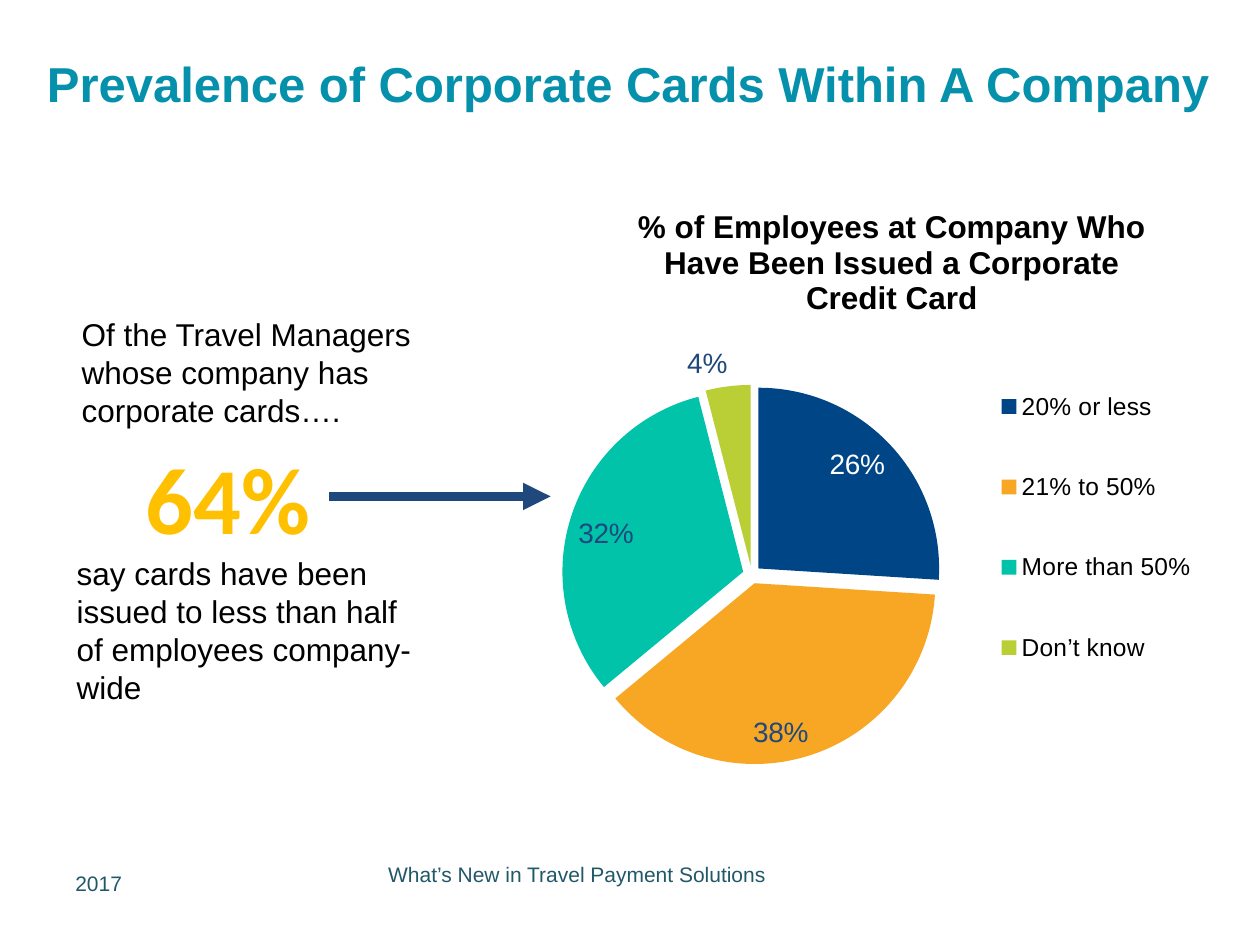
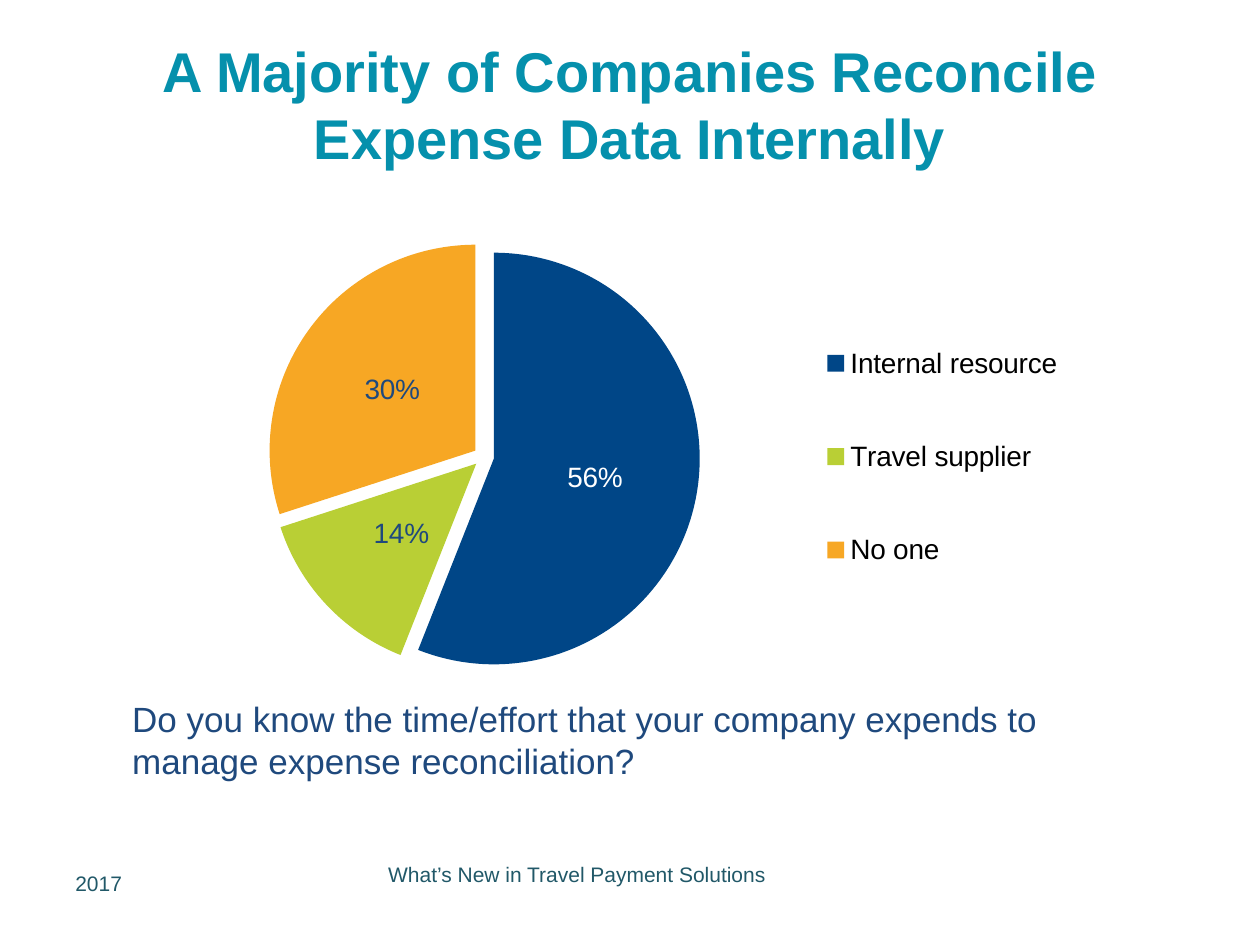
import pptx
import pptx.chart.data
import pptx.dml.color
import pptx.enum.chart
import pptx.enum.shapes
import pptx.enum.text
import pptx.oxml
import pptx.oxml.ns
import pptx.util
from pptx.dml.color import RGBColor
from pptx.util import Inches

TITLE_TEAL = RGBColor(0x05, 0x90, 0xAC)
FOOTER_TEAL = RGBColor(0x21, 0x58, 0x68)
NAVY = RGBColor(0x1F, 0x49, 0x7D)
GOLD = RGBColor(0xFF, 0xC0, 0x00)
BLACK = RGBColor(0, 0, 0)
WHITE = RGBColor(0xFF, 0xFF, 0xFF)
BLUE = RGBColor(0x00, 0x46, 0x87)
ORANGE = RGBColor(0xF7, 0xA7, 0x24)
AQUA = RGBColor(0x00, 0xC3, 0xAA)
LIME = RGBColor(0xB9, 0xCF, 0x35)

ALIGN = pptx.enum.text.PP_ALIGN
ANCHOR = pptx.enum.text.MSO_ANCHOR
LABEL = pptx.enum.chart.XL_LABEL_POSITION
qn = pptx.oxml.ns.qn
CHART_NS = pptx.oxml.ns.nsdecls("c")


def write(box, text, size, color, font="Arial", bold=False, align=ALIGN.LEFT):
    """Fill a text box or placeholder and format its only run."""
    frame = box.text_frame
    frame.word_wrap = True
    frame.text = text
    paragraph = frame.paragraphs[0]
    paragraph.alignment = align
    run_font = paragraph.runs[0].font
    run_font.name, run_font.size, run_font.bold = font, pptx.util.Pt(size), bold
    run_font.color.rgb = color
    return frame


def place(part, index, **fractions):
    """Give a chart part a manual layout, in fractions of the chart."""
    old = part.find(qn("c:layout"))
    if old is not None:
        part.remove(old)
    inner = '<c:layoutTarget val="inner"/>' if index == 0 else ""
    modes = "".join(f'<c:{k}Mode val="edge"/>' for k in fractions if k in "xy")
    values = "".join(f'<c:{k} val="{v}"/>' for k, v in fractions.items())
    part.insert(index, pptx.oxml.parse_xml(
        f"<c:layout {CHART_NS}><c:manualLayout>{inner}{modes}{values}"
        "</c:manualLayout></c:layout>"))


prs = pptx.Presentation()
prs.slide_width, prs.slide_height = Inches(10), Inches(7.5)

pages = [
    dict(title="Prevalence of Corporate Cards Within A Company",
         title_size=28, title_box=(0.17, 0.15, 9.63, 1.02),
         chart_box=(4.07, 1.43, 5.58, 5.4),
         chart_title="% of Employees at Company Who Have Been Issued "
                     "a Corporate Credit Card",
         plot=dict(x=0.07, y=0.28, w=0.54, h=0.6),
         legend=dict(x=0.67, y=0.235, w=0.32, h=0.55), legend_size=14,
         slices=[("20% or less", 0.26, BLUE, WHITE, LABEL.INSIDE_END),
                 ("21% to 50%", 0.38, ORANGE, NAVY, LABEL.INSIDE_END),
                 ("More than 50%", 0.32, AQUA, NAVY, LABEL.INSIDE_END),
                 ("Don’t know", 0.04, LIME, NAVY, LABEL.OUTSIDE_END)],
         notes=[("say cards have been issued to less than half of employees "
                 "company-wide", 18, BLACK, (0.51, 4.35, 2.88, 1.31)),
                ("Of the Travel Managers whose company has corporate cards….",
                 18, BLACK, (0.55, 2.45, 2.84, 1.01))]),
    dict(title="A Majority of Companies Reconcile Expense Data Internally",
         title_size=32, title_box=(0.5, 0.31, 9, 1.02),
         chart_box=(1, 1.58, 8, 4.7), chart_title=None,
         plot=dict(x=0.14, y=0.07, w=0.43, h=0.73),
         legend=dict(x=0.68, y=0.145, w=0.26, h=0.58), legend_size=16,
         slices=[("Internal resource", 0.56, BLUE, WHITE, LABEL.CENTER),
                 ("Travel supplier", 0.14, LIME, NAVY, LABEL.CENTER),
                 ("No one", 0.3, ORANGE, NAVY, LABEL.CENTER)],
         notes=[("Do you know the time/effort that your company expends to "
                 "manage expense reconciliation?", 20, NAVY,
                 (0.95, 5.49, 8.08, 0.77))]),
]

for page in pages:
    slide = prs.slides.add_slide(prs.slide_layouts[5])

    # Footer
    footer = slide.shapes.add_textbox(*map(Inches, (1.63, 6.61, 5.9, 0.65)))
    write(footer, "What’s New in Travel Payment Solutions", 12, FOOTER_TEAL,
          align=ALIGN.CENTER).vertical_anchor = ANCHOR.MIDDLE
    year = slide.shapes.add_textbox(*map(Inches, (0.5, 6.86, 2.56, 0.57)))
    write(year, "2017", 12, FOOTER_TEAL)

    # Title
    title = slide.shapes.title
    title.left, title.top, title.width, title.height = map(
        Inches, page["title_box"])
    heading = write(title, page["title"], page["title_size"], TITLE_TEAL,
                    bold=True, align=ALIGN.CENTER)
    heading.vertical_anchor = ANCHOR.MIDDLE
    heading.auto_size = pptx.enum.text.MSO_AUTO_SIZE.NONE

    # Pie chart
    names, shares, *_ = zip(*page["slices"])
    answers = pptx.chart.data.CategoryChartData(number_format="0%")
    answers.categories = names
    answers.add_series("Series 1", shares)
    chart = slide.shapes.add_chart(
        pptx.enum.chart.XL_CHART_TYPE.PIE,
        *map(Inches, page["chart_box"]), answers).chart
    chart.font.name, chart.font.size = "Arial", pptx.util.Pt(10)
    chart.font.color.rgb = BLACK
    pie = chart.plots[0]
    pie.vary_by_categories = True
    place(chart._chartSpace.chart.plotArea, 0, **page["plot"])

    chart.has_title = page["chart_title"] is not None
    if chart.has_title:
        caption = chart.chart_title.text_frame
        caption.text = page["chart_title"]
        caption_font = caption.paragraphs[0].runs[0].font
        caption_font.name, caption_font.size = "Arial", pptx.util.Pt(18)
        caption_font.bold = True
        caption_font.color.rgb = BLACK
        place(chart.chart_title._element, 1, x=0.17, y=0.03)

    chart.has_legend = True
    legend = chart.legend
    legend.position = pptx.enum.chart.XL_LEGEND_POSITION.BOTTOM
    legend.include_in_layout = False
    legend.font.name = "Arial"
    legend.font.size = pptx.util.Pt(page["legend_size"])
    legend.font.color.rgb = BLACK
    place(legend._element, 1, **page["legend"])

    # Slices, pulled apart, with their labels
    series = pie.series[0]
    series._element.find(qn("c:tx")).addnext(
        pptx.oxml.parse_xml(f'<c:explosion {CHART_NS} val="5"/>'))
    labels = series.data_labels
    labels.show_value = True
    labels.number_format, labels.number_format_is_linked = "0%", False
    for i, (_, _, fill, label_color, position) in enumerate(page["slices"]):
        point = series.points[i]
        point.format.fill.solid()
        point.format.fill.fore_color.rgb = fill
        label = point.data_label
        label.font.name, label.font.size = "Arial", pptx.util.Pt(16)
        label.font.color.rgb = label_color
        label.position = position

    # Text beside or below the chart
    for text, size, color, box in page["notes"]:
        note = slide.shapes.add_textbox(*map(Inches, box))
        write(note, text, size, color)

# Key figure and its arrow to the pie, on the first slide
first = prs.slides[0].shapes
figure = first.add_textbox(*map(Inches, (1.06, 3.44, 1.52, 1.01)))
write(figure, "64%", 54, GOLD, font="Calibri", bold=True).word_wrap = False
arrow = first.add_connector(
    pptx.enum.shapes.MSO_CONNECTOR.STRAIGHT,
    *map(Inches, (2.61, 3.94, 4.37, 3.94)))
arrow.line.color.rgb = NAVY
arrow.line.width = pptx.util.Pt(5.25)
drawing_ns = pptx.oxml.ns.nsdecls("a")
arrow.line._get_or_add_ln().append(
    pptx.oxml.parse_xml(f'<a:tailEnd {drawing_ns} type="triangle"/>'))
arrow._element.spPr.append(
    pptx.oxml.parse_xml(f"<a:effectLst {drawing_ns}/>"))

prs.save("out.pptx")
